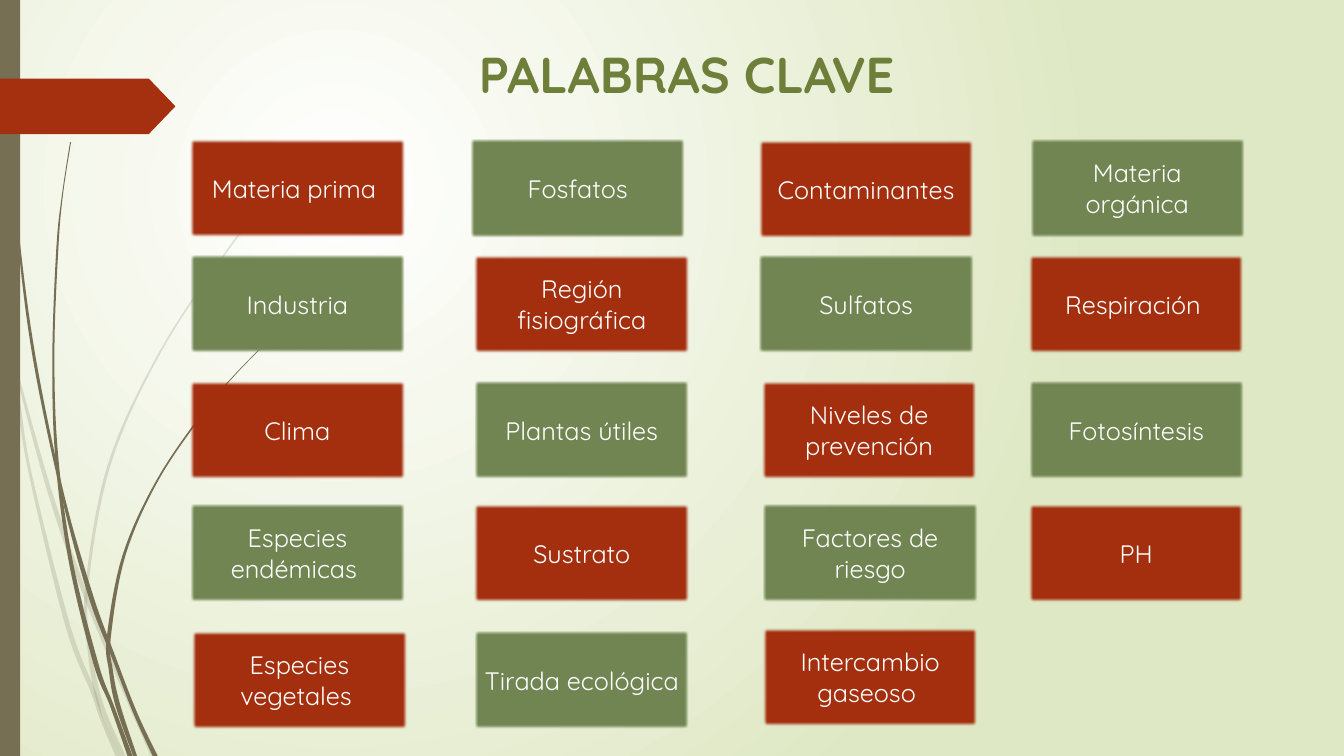
from lxml import etree
from pptx import Presentation
from pptx.dml.color import RGBColor
from pptx.enum.shapes import MSO_SHAPE as Preset
from pptx.enum.text import MSO_ANCHOR as Anchor, PP_ALIGN as Align
from pptx.oxml.ns import qn
from pptx.util import Inches, Pt

FONT = "Quicksand"
COLORS = {
    "white": "FFFFFF",
    "pale_green": "DFE8C4",
    "title": "6D7F39",
    "red": "A53010",
    "dark_red": "7A240C",
    "green": "728653",
    "brown": "766F54",
}

COLUMNS = [1.88, 4.7, 7.54, 10.2]
ROWS = [1.37, 2.52, 3.77, 4.99, 6.25]
CARD_WIDTH, CARD_HEIGHT = 2.14, 0.99
KEYWORDS = [
    ["Materia prima ", "Fosfatos", "Contaminantes", "Materia orgánica"],
    ["Industria", "Región fisiográfica", "Sulfatos", "Respiración "],
    ["Clima", "Plantas útiles", "Niveles de prevención", "Fotosíntesis"],
    ["Especies endémicas ", "Sustrato", "Factores de riesgo", "PH"],
    ["Especies vegetales ", "Tirada ecológica", "Intercambio gaseoso "],
]
# Cards that sit slightly off the grid: (right, down)
NUDGES = {
    "Fosfatos": (-0.04, 0),
    "Contaminantes": (-0.02, 0.01),
    "Materia orgánica": (0.01, 0),
    "Sulfatos": (-0.02, 0),
    "Niveles de prevención": (0.01, 0),
    "Factores de riesgo": (0.02, 0),
    "Especies vegetales ": (0.02, 0),
    "Intercambio gaseoso ": (0.02, -0.03),
}

# Grass stems as (x, y, width) along the centre line
PALE_STEMS = [
    [(0, 2.9, 0.02), (0.11, 3.46, 0.02), (0.38, 4.49, 0.04), (0.6, 5.21, 0.05),
     (0.86, 5.93, 0.05), (1.23, 6.83, 0.05), (1.52, 7.5, 0.05)],
    [(0.11, 3.5, 0.01), (0.18, 3.95, 0.03), (0.3, 4.7, 0.03), (0.67, 6.2, 0.05),
     (0.93, 6.88, 0.05), (1.01, 7.14, 0.03), (1.17, 7.5, 0.05)],
    [(3.12, 1.53, 0.01), (2.68, 1.97, 0.01), (2.28, 2.45, 0.02),
     (1.59, 3.49, 0.02), (1.08, 4.62, 0.03), (0.86, 5.84, 0.03),
     (0.89, 6.46, 0.04), (1, 7, 0.06), (1.22, 7.5, 0.05)],
]
DARK_STEMS = [
    [(0.04, 0, 0.01), (0.08, 1.1, 0.01), (0.18, 2.33, 0.02), (0.34, 3.55, 0.03),
     (0.62, 4.9, 0.03), (0.9, 5.91, 0.05), (1.12, 6.5, 0.04),
     (1.34, 7.07, 0.04), (1.54, 7.5, 0.05)],
    [(0.7, 1.41, 0.01), (0.62, 1.93, 0.01), (0.57, 2.45, 0.02),
     (0.53, 3.49, 0.02), (0.56, 4.5, 0.03), (0.7, 5.56, 0.04),
     (0.95, 6.58, 0.05), (1.11, 7, 0.04), (1.29, 7.5, 0.05)],
    [(2.6, 3.44, 0.01), (2.31, 3.74, 0.01), (2.05, 4.05, 0.02),
     (1.57, 4.75, 0.02), (1.23, 5.51, 0.03), (1.08, 6.32, 0.04),
     (1.1, 6.65, 0.04), (1.17, 7, 0.05), (1.34, 7.5, 0.04)],
]


def rgb(name):
    return RGBColor.from_string(COLORS[name])


def set_background(slide):
    """Circular gradient, white at a quarter of the width and height."""
    fill = slide.background.fill
    fill.gradient()
    for stop, name in zip(fill.gradient_stops, ["white", "pale_green"]):
        stop.color.rgb = rgb(name)
    linear = next(slide.background._cSld.iter(qn("a:lin")))
    gradient = linear.getparent()
    gradient.remove(linear)
    circle = etree.SubElement(gradient, qn("a:path"), path="circle")
    etree.SubElement(circle, qn("a:fillToRect"),
                     l="50000", t="50000", r="100000", b="100000")


def paint(shape, color):
    shape.shadow.inherit = False
    shape.fill.solid()
    shape.fill.fore_color.rgb = rgb(color)
    shape.line.fill.background()


def smooth(points, steps=8):
    """Catmull-Rom curve through the points."""
    padded = [points[0], *points, points[-1]]
    curve = []
    for a, b, c, d in zip(padded, padded[1:], padded[2:], padded[3:]):
        for step in range(steps):
            t = step / steps
            curve.append([
                (2 * q + (r - p) * t + (2 * p - 5 * q + 4 * r - s) * t ** 2
                 + (3 * q - p - 3 * r + s) * t ** 3) / 2
                for p, q, r, s in zip(a, b, c, d)])
    return curve + [points[-1]]


def add_stem(slide, points, opacity=100):
    curve = smooth(points)
    left = [(Inches(x - width / 2), Inches(y)) for x, y, width in curve]
    right = [(Inches(x + width / 2), Inches(y)) for x, y, width in curve]
    builder = slide.shapes.build_freeform(*left[0])
    builder.add_line_segments(left[1:] + right[::-1], close=True)
    stem = builder.convert_to_shape()
    paint(stem, "brown")
    if opacity < 100:
        color = next(stem._element.spPr.iter(qn("a:srgbClr")))
        etree.SubElement(color, qn("a:alpha"), val=str(opacity * 1000))


def add_block(slide, preset, left, top, width, height, color):
    block = slide.shapes.add_shape(
        preset, Inches(left), Inches(top), Inches(width), Inches(height))
    paint(block, color)
    return block


def write(shape, text, size, color, anchor, bold=False):
    frame = shape.text_frame
    frame.text = text
    frame.word_wrap = True
    frame.vertical_anchor = anchor
    paragraph = frame.paragraphs[0]
    paragraph.alignment = Align.CENTER
    font = paragraph.runs[0].font
    font.name, font.size, font.bold = FONT, Pt(size), bold
    font.color.rgb = rgb(color)


def add_card(slide, text, left, top, is_red):
    card = add_block(slide, Preset.RECTANGLE, left, top, CARD_WIDTH, CARD_HEIGHT,
                     "red" if is_red else "green")
    card.line.color.rgb = rgb("dark_red" if is_red else "white")
    card.line.width = Pt(1.25 if is_red else 1.75)
    effects = card._element.spPr.find(qn("a:effectLst"))
    etree.SubElement(effects, qn("a:softEdge"), rad=str(Pt(2.5)))
    write(card, text, 18, "white", Anchor.MIDDLE)


def add_title(slide, text):
    title = slide.shapes.add_textbox(
        Inches(3.62), Inches(0.38), Inches(6.38), Inches(0.82))
    write(title, text, 36, "title", Anchor.TOP, bold=True)


def main():
    presentation = Presentation()
    presentation.slide_width = Inches(13.33)
    presentation.slide_height = Inches(7.5)
    slide = presentation.slides.add_slide(presentation.slide_layouts[6])

    set_background(slide)
    for points in PALE_STEMS:
        add_stem(slide, points, opacity=20)
    for points in DARK_STEMS:
        add_stem(slide, points)
    add_block(slide, Preset.RECTANGLE, 0, 0, 0.2, 7.5, "brown")
    arrow = add_block(slide, Preset.PENTAGON, 0, 0.78, 1.74, 0.55, "red")
    arrow.adjustments[0] = 0.48

    add_title(slide, "PALABRAS CLAVE")
    for row, words in enumerate(KEYWORDS):
        for column, word in enumerate(words):
            right, down = NUDGES.get(word, (0, 0))
            add_card(slide, word, COLUMNS[column] + right, ROWS[row] + down,
                     is_red=(row + column) % 2 == 0)

    presentation.save("out.pptx")


if __name__ == "__main__":
    main()
